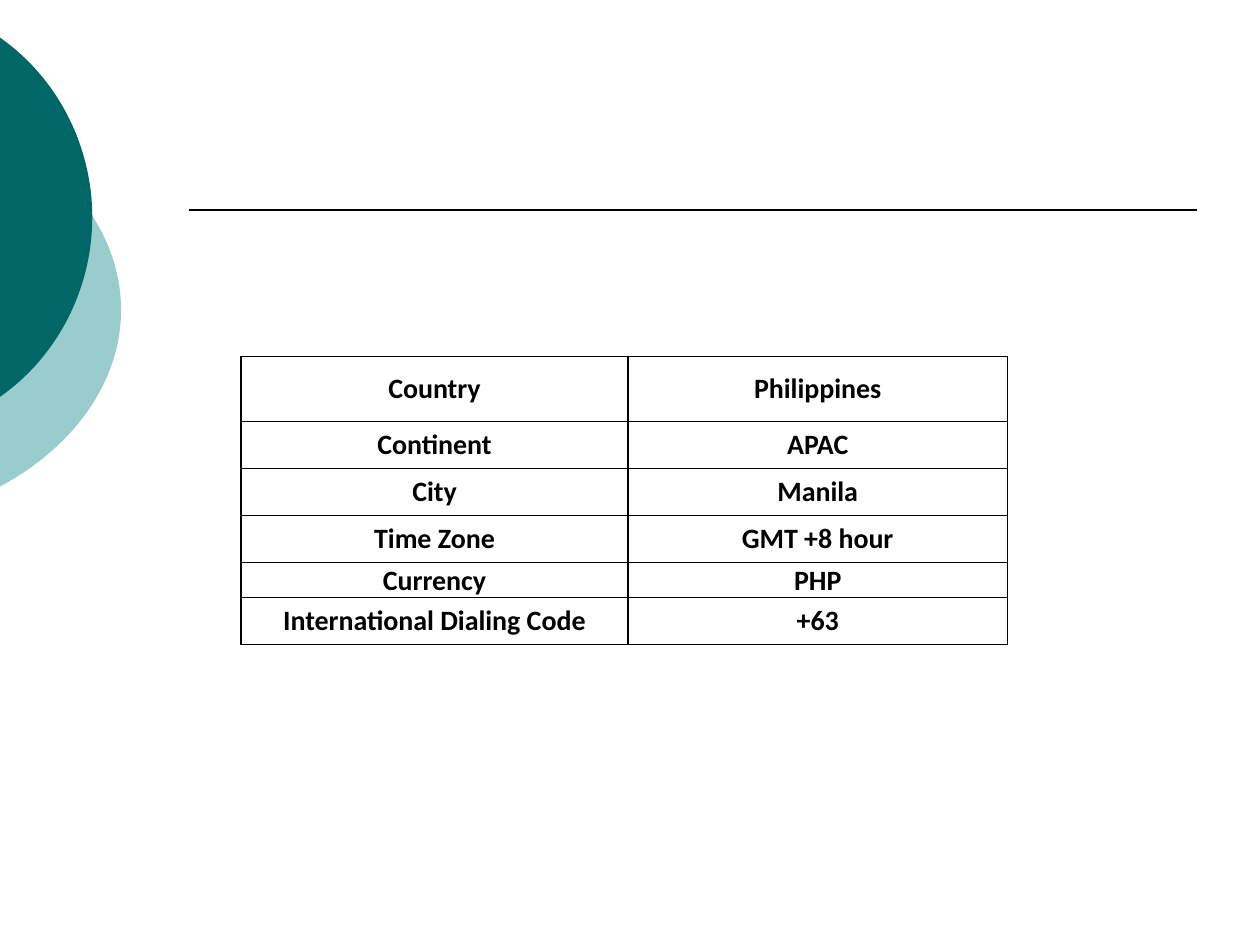
from lxml.etree import SubElement
from pptx import Presentation
from pptx.dml.color import RGBColor as Rgb
from pptx.enum.shapes import MSO_CONNECTOR as Connector
from pptx.enum.text import MSO_ANCHOR as Anchor, PP_ALIGN as Align
from pptx.oxml.ns import qn
from pptx.util import Cm, Pt

COLORS = {"ink": "000000", "dark": "006666", "light": "99CCCC"}
FACTS = [
    ("Country", "Philippines"),
    ("Continent", "APAC"),
    ("City", "Manila"),
    ("Time Zone", "GMT +8 hour"),
    ("Currency", "PHP"),
    ("International Dialing Code", "+63"),
]


class SlideBuilder:
    """Draw styled elements on the current slide."""

    font = "Calibri"
    size = Pt(16)
    stroke = Pt(1)

    def __init__(self, slide):
        self.slide = slide

    def color(self, name):
        return Rgb.from_string(COLORS[name])

    def disc(self, left, top, width, height, center, half, bend, tip_rise, name):
        right, bottom = left + width, top + height
        frame = [(Cm(x), Cm(y)) for x, y in
                 [(left, top), (right, top), (right, bottom), (left, bottom)]]
        builder = self.slide.shapes.build_freeform(*frame[0], scale=1.0)
        builder.add_line_segments(frame[1:], close=True)
        disc = builder.convert_to_shape()
        bend_x, bend_rise = bend
        upper = [(bend_x, center - bend_rise), (right, center - tip_rise),
                 (right, center)]
        lower = [(right, center + tip_rise), (bend_x, center + bend_rise),
                 (0, center + half)]
        outline = disc._element.spPr.find(".//" + qn("a:path"))
        for step in list(outline):
            outline.remove(step)
        for command, points in [("moveTo", [(0, center - half)]),
                                ("cubicBezTo", upper), ("cubicBezTo", lower)]:
            step = SubElement(outline, qn(f"a:{command}"))
            for x, y in points:
                SubElement(step, qn("a:pt"), x=str(Cm(x - left)), y=str(Cm(y - top)))
        SubElement(outline, qn("a:close"))
        disc.shadow.inherit = False
        disc.fill.solid()
        disc.fill.fore_color.rgb = self.color(name)
        disc.line.fill.background()

    def rule(self, left, right, y):
        rule = self.slide.shapes.add_connector(
            Connector.STRAIGHT, Cm(left), Cm(y), Cm(right), Cm(y))
        rule.line.color.rgb = self.color("ink")
        rule.line.width = self.stroke
        SubElement(rule._element.spPr, qn("a:effectLst"))

    def borders(self, cell):
        properties = cell._tc.get_or_add_tcPr()
        for side in "LRTB":
            border = SubElement(properties, qn(f"a:ln{side}"), w=str(self.stroke))
            fill = SubElement(border, qn("a:solidFill"))
            SubElement(fill, qn("a:srgbClr"), val=COLORS["ink"])

    def cell(self, cell, text):
        self.borders(cell)
        cell.fill.background()
        cell.vertical_anchor = Anchor.MIDDLE
        cell.text_frame.text = text
        paragraph = cell.text_frame.paragraphs[0]
        paragraph.alignment = Align.CENTER
        font = paragraph.runs[0].font
        font.name, font.size, font.bold = self.font, self.size, True
        font.color.rgb = self.color("ink")

    def table(self, left, top, widths, heights, rows, tight_row):
        table = self.slide.shapes.add_table(
            len(rows), len(widths), Cm(left), Cm(top),
            Cm(sum(widths)), Cm(sum(heights))).table
        table.first_row = table.horz_banding = False
        for column, width in zip(table.columns, widths):
            column.width = Cm(width)
        for row, height, texts in zip(table.rows, heights, rows):
            row.height = Cm(height)
            for cell, text in zip(row.cells, texts):
                self.cell(cell, text)
        for cell in table.rows[tight_row].cells:
            cell.margin_left = cell.margin_right = cell.margin_top = Cm(0.02)
            cell.margin_bottom = 0


def main():
    deck = Presentation()
    deck.slide_width, deck.slide_height = Cm(25.4), Cm(19.05)
    builder = SlideBuilder(deck.slides.add_slide(deck.slide_layouts[6]))
    builder.disc(-8.99, 1.9, 11.43, 8.69, 6.25, 3.56, (1.52, 2.74), 1.42, "light")
    builder.disc(-6.73, 0, 8.59, 8.76, 4.38, 3.62, (1.17, 2.8), 1.43, "dark")
    builder.rule(3.81, 24.13, 4.23)
    builder.table(4.86, 7.19, [7.8, 7.65], [1.31] + [0.69] * 5, FACTS, tight_row=4)
    deck.save("out.pptx")


if __name__ == "__main__":
    main()
